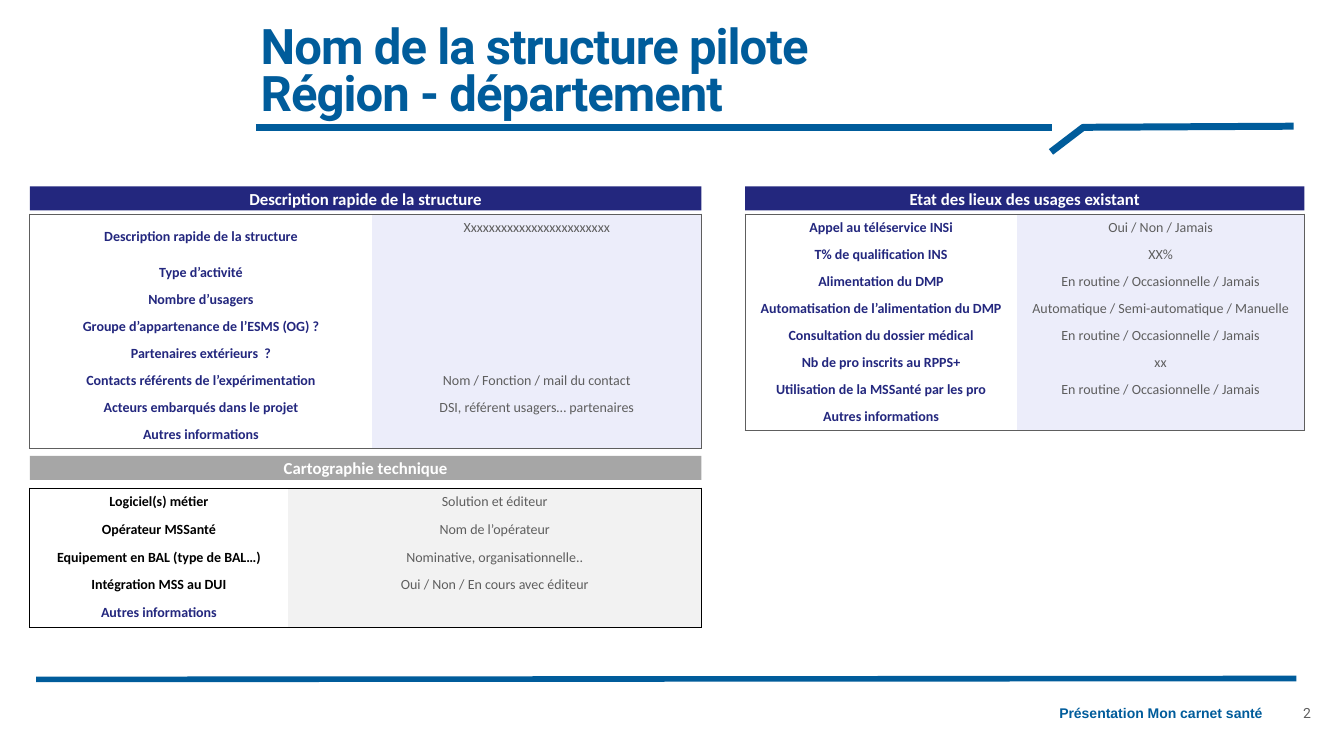
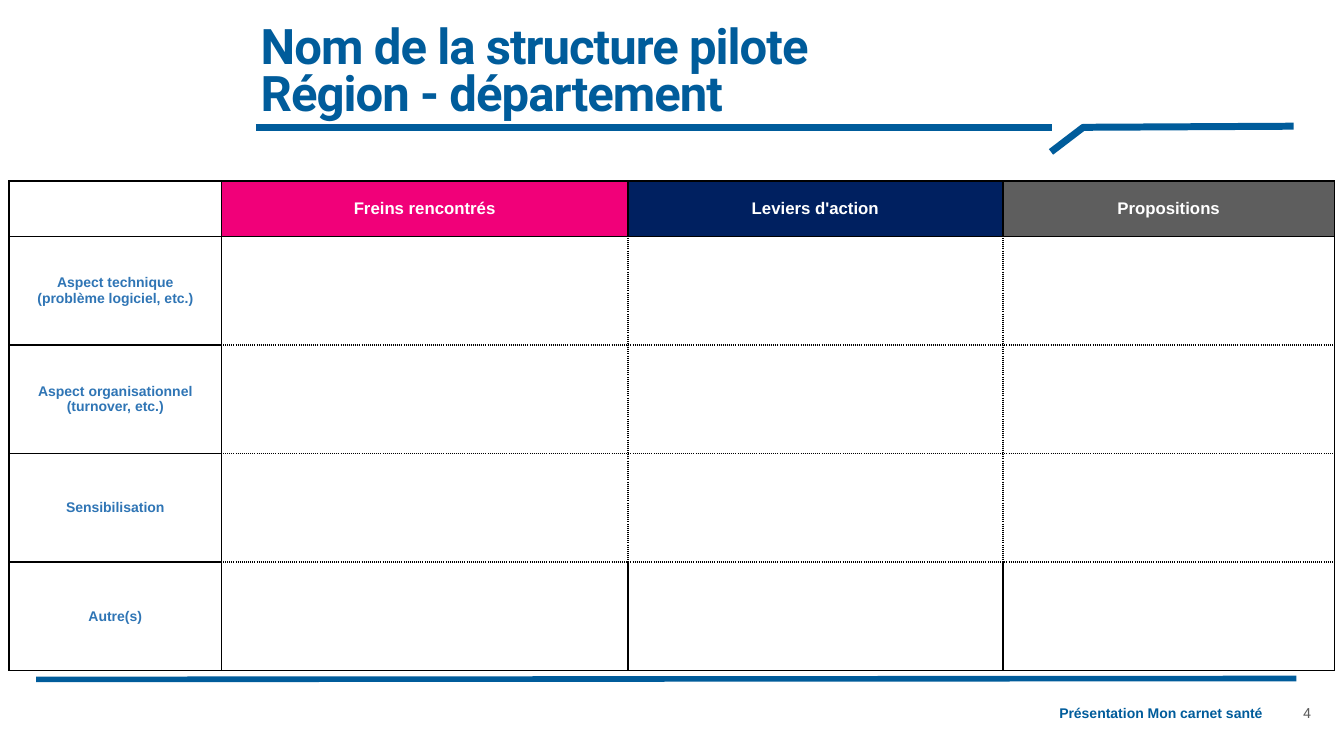
"""Builds two slides that describe a pilot structure, its uses and its obstacles."""
from copy import deepcopy

from pptx import Presentation, util as u
from pptx.dml.color import RGBColor
from pptx.enum import shapes, text
from pptx.oxml import ns, xmlchemy as xml

BLUE, NAVY, PALE = "005C9B", "23277E", "ECEDFA"
GREY, BLACK, WHITE = "5E5E5E", "000000", "FFFFFF"
SILVER, MIST = "A6A6A6", "F2F2F2"
LEFT, MID, RIGHT = text.PP_ALIGN.LEFT, text.PP_ALIGN.CENTER, text.PP_ALIGN.RIGHT
TOP, CORE, LOW = text.MSO_ANCHOR.TOP, text.MSO_ANCHOR.MIDDLE, text.MSO_ANCHOR.BOTTOM
SIDES = "LRTB"


def tint(code):
    return RGBColor.from_string(code)


def write(frame, words, size=10, font="Calibri", color=GREY, bold=False,
          align=MID, anchor=None, pad=None, lead=None, track=None):
    frame.word_wrap = True
    if anchor is not None:
        frame.vertical_anchor = anchor
    if pad is not None:
        frame.margin_left = frame.margin_right = u.Inches(pad)
        frame.margin_top = frame.margin_bottom = u.Inches(pad)
    frame.text = words
    for para in frame.paragraphs:
        para.alignment = align
        if lead:
            para.line_spacing = lead
        for run in para.runs:
            face = run.font
            face.size, face.name, face.bold = u.Pt(size), font, bold
            face.color.rgb = tint(color)
            if track:
                run._r.get_or_add_rPr().set("spc", str(track))
        for gap in para._p.findall(ns.qn("a:br")):
            gap.append(deepcopy(para.runs[0]._r.rPr))
        if not para.runs:
            para._p.get_or_add_endParaRPr().set("sz", str(size * 100))


def edge(cell, lines):
    props = cell._tc.get_or_add_tcPr()
    for side in SIDES:
        line = xml.OxmlElement(f"a:ln{side}")
        props.append(line)
        if side not in lines:
            line.append(xml.OxmlElement("a:noFill"))
            continue
        color, width, dash = lines[side]
        line.set("w", str(u.Pt(width)))
        fill = xml.OxmlElement("a:solidFill")
        hue = xml.OxmlElement("a:srgbClr")
        hue.set("val", color)
        fill.append(hue)
        style = xml.OxmlElement("a:prstDash")
        style.set("val", dash)
        line.extend([fill, style])


class Deck:
    """Holds the style and the current slide; lengths are percent of its size."""

    def __init__(self):
        self.show = Presentation()
        self.show.slide_width = u.Inches(13.33)
        self.show.slide_height = u.Inches(7.5)
        self.slide = None

    def wide(self, part):
        return int(self.show.slide_width * part / 100)

    def high(self, part):
        return int(self.show.slide_height * part / 100)

    def box(self, x, y, w, h):
        return self.wide(x), self.high(y), self.wide(w), self.high(h)

    def start(self, title, number):
        self.slide = self.show.slides.add_slide(self.show.slide_layouts[5])
        self.rule(19.05, 16.85, 78.3, 16.85, 5)
        self.bend((78.2, 20.1), (80.6, 16.85), (96.25, 16.7))
        self.rule(2.68, 89.87, 96.45, 89.75, 4)
        self.note(63.6, 92.5, 30.7, 4.7, "Présentation Mon carnet santé",
                  font="Arial", color=BLUE, bold=True, align=RIGHT, pad=0.05)
        self.title(title)
        self.note(95.35, 92.5, 3.8, 3.5, number, font="Roboto")

    def title(self, words):
        head = self.slide.shapes.title
        head.left, head.top, head.width, head.height = self.box(18.95, 0.25, 57.3, 16.5)
        head.text_frame.auto_size = text.MSO_AUTO_SIZE.NONE
        write(head.text_frame, words, size=35, font="Roboto", color=BLUE, bold=True,
              align=LEFT, anchor=LOW, pad=0.06, lead=0.8, track=-70)

    def rule(self, x, y, to_x, to_y, width):
        line = self.slide.shapes.add_connector(
            shapes.MSO_CONNECTOR.STRAIGHT, *self.box(x, y, to_x, to_y))
        line.line.color.rgb, line.line.width = tint(BLUE), u.Pt(width)
        line._element.spPr.append(xml.OxmlElement("a:effectLst"))

    def bend(self, *dots):
        dots = [(self.wide(x), self.high(y)) for x, y in dots]
        path = self.slide.shapes.build_freeform(*dots[0])
        path.add_line_segments(dots[1:], close=False)
        form = path.convert_to_shape()
        form.shadow.inherit = False
        form.fill.background()
        form.line.color.rgb, form.line.width = tint(BLUE), u.Pt(5)

    def note(self, x, y, w, h, words, **style):
        label = self.slide.shapes.add_textbox(*self.box(x, y, w, h))
        write(label.text_frame, words, **style)

    def bar(self, x, y, w, words, fill):
        band = self.slide.shapes.add_shape(
            shapes.MSO_SHAPE.RECTANGLE, *self.box(x, y, w, 3.2))
        band.shadow.inherit = False
        band.fill.solid()
        band.fill.fore_color.rgb = tint(fill)
        band.line.fill.background()
        write(band.text_frame, words, size=12, color=WHITE, bold=True, anchor=CORE)

    def table(self, x, y, cols, rows):
        frame = self.slide.shapes.add_table(
            len(rows), len(cols), *self.box(x, y, sum(cols), sum(rows)))
        grid = frame.table
        grid.first_row = grid.horz_banding = False
        for col, size in zip(grid.columns, cols):
            col.width = self.wide(size)
        for row, size in zip(grid.rows, rows):
            row.height = self.high(size)
        return grid

    def cell(self, cell, words, lines, fill=None, anchor=TOP, **style):
        edge(cell, lines)
        if fill:
            cell.fill.solid()
            cell.fill.fore_color.rgb = tint(fill)
        else:
            cell.fill.background()
        cell.vertical_anchor = anchor
        cell.margin_left = cell.margin_right = u.Inches(0.1)
        cell.margin_top = cell.margin_bottom = u.Inches(0.05)
        write(cell.text_frame, words, **style)

    def panel(self, x, y, head, pairs, cols, rows, gap=3.7,
              band=NAVY, fill=PALE, line=GREY, inks=None, anchor=TOP):
        self.bar(x, y, sum(cols), head, band)
        grid = self.table(x, y + gap, cols, rows)
        last = len(pairs) - 1
        inks = inks or [NAVY] * len(pairs)
        side = (line, 1, "solid")
        for r, (name, value) in enumerate(pairs):
            ends = {"T": r == 0, "B": r == last}
            rim = {end: side for end, on in ends.items() if on}
            self.cell(grid.cell(r, 0), name, {**rim, "L": side},
                      color=inks[r], bold=True, anchor=anchor)
            self.cell(grid.cell(r, 1), value, {**rim, "R": side}, fill)

    def matrix(self, x, y, cols, rows, heads, names):
        grid = self.table(x, y, cols, rows)
        end, last = len(rows) - 1, len(cols) - 1
        for r in range(len(rows)):
            for c in range(len(cols)):
                inner = 0 < r < end
                dots = {"L": inner and c > 1, "R": inner and 0 < c < last,
                        "T": c > 0 and r > 1, "B": c > 0 and inner}
                lines = {side: (BLACK, 1.22, "sysDot" if dots[side] else "solid")
                         for side in SIDES}
                words, fill, size, color = "", None, 10, "2F75B5"
                if r == 0 and c:
                    (words, fill), size, color = heads[c - 1], 12, WHITE
                elif r and c == 0:
                    words = names[r - 1]
                self.cell(grid.cell(r, c), words, lines, fill, size=size,
                          font="Arial", color=color, bold=True, anchor=CORE)


def main():
    deck = Deck()
    title = "Nom de la structure pilote\vRégion - département"
    often = "En routine / Occasionnelle / Jamais"
    other = ("Autres informations", "")

    deck.start(title, "2")
    deck.panel(55.45, 24.65, "Etat des lieux des usages existant", [
        ("Appel au téléservice INSi", "Oui / Non / Jamais"),
        ("T% de qualification INS", "XX%"),
        ("Alimentation du DMP", often),
        ("Automatisation de l’alimentation du DMP",
         "Automatique / Semi-automatique / Manuelle"),
        ("Consultation du dossier médical", often),
        ("Nb de pro inscrits au RPPS+", "xx"),
        ("Utilisation de la MSSanté par les pro", often),
        other,
    ], [20.2, 21.4], [3.58] * 8)
    deck.panel(2.22, 60.3, "Cartographie technique", [
        ("Logiciel(s) métier", "Solution et éditeur"),
        ("Opérateur MSSanté", "Nom de l’opérateur"),
        ("Equipement en BAL (type de BAL…)", "Nominative, organisationnelle.."),
        ("Intégration MSS au DUI", "Oui / Non / En cours avec éditeur"),
        other,
    ], [19.2, 30.78], [3.68] * 5, gap=4.27, band=SILVER, fill=MIST, line=BLACK,
        inks=[BLACK] * 4 + [NAVY])
    deck.panel(2.22, 24.65, "Description rapide de la structure", [
        ("Description rapide de la structure", "Xxxxxxxxxxxxxxxxxxxxxxxx"),
        ("Type d’activité", ""),
        ("Nombre d’usagers", ""),
        ("Groupe d’appartenance de l’ESMS (OG) ?", ""),
        ("Partenaires extérieurs  ?", ""),
        ("Contacts référents de l’expérimentation", "Nom / Fonction / mail du contact"),
        ("Acteurs embarqués dans le projet", "DSI, référent usagers… partenaires"),
        other,
    ], [25.45, 24.53], [5.95] + [3.58] * 7, anchor=CORE)

    deck.start(title, "4")
    deck.matrix(0.66, 23.95, [15.83, 30.23, 27.9, 24.68], [7.35] + [14.35] * 4,
                [("Freins rencontrés", "F10079"), ("Leviers d'action", "002060"),
                 ("Propositions", GREY)],
                ["Aspect technique\n(problème logiciel, etc.)",
                 "Aspect organisationnel (turnover, etc.)",
                 "Sensibilisation", "Autre(s)"])
    deck.show.save("out.pptx")


if __name__ == "__main__":
    main()
